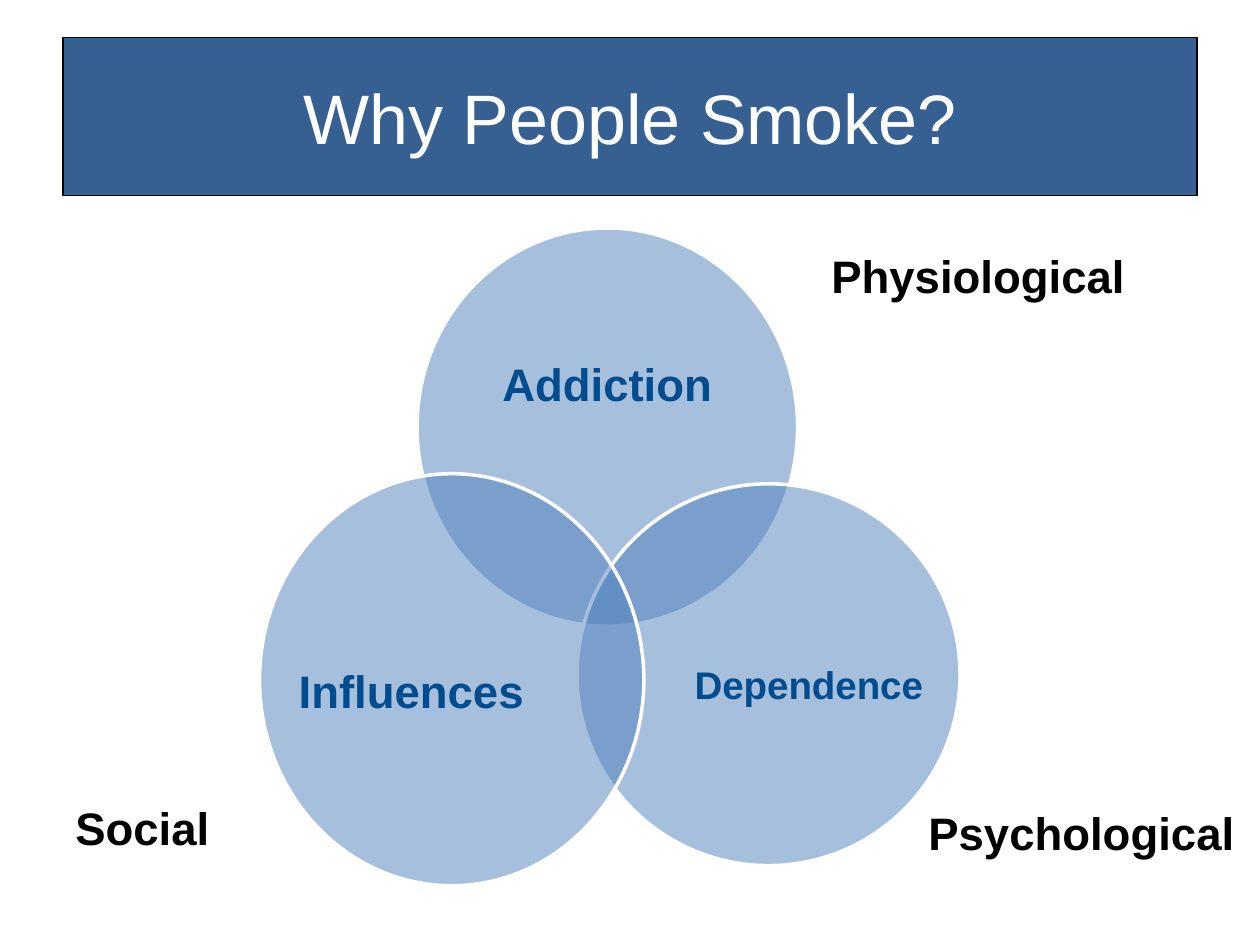
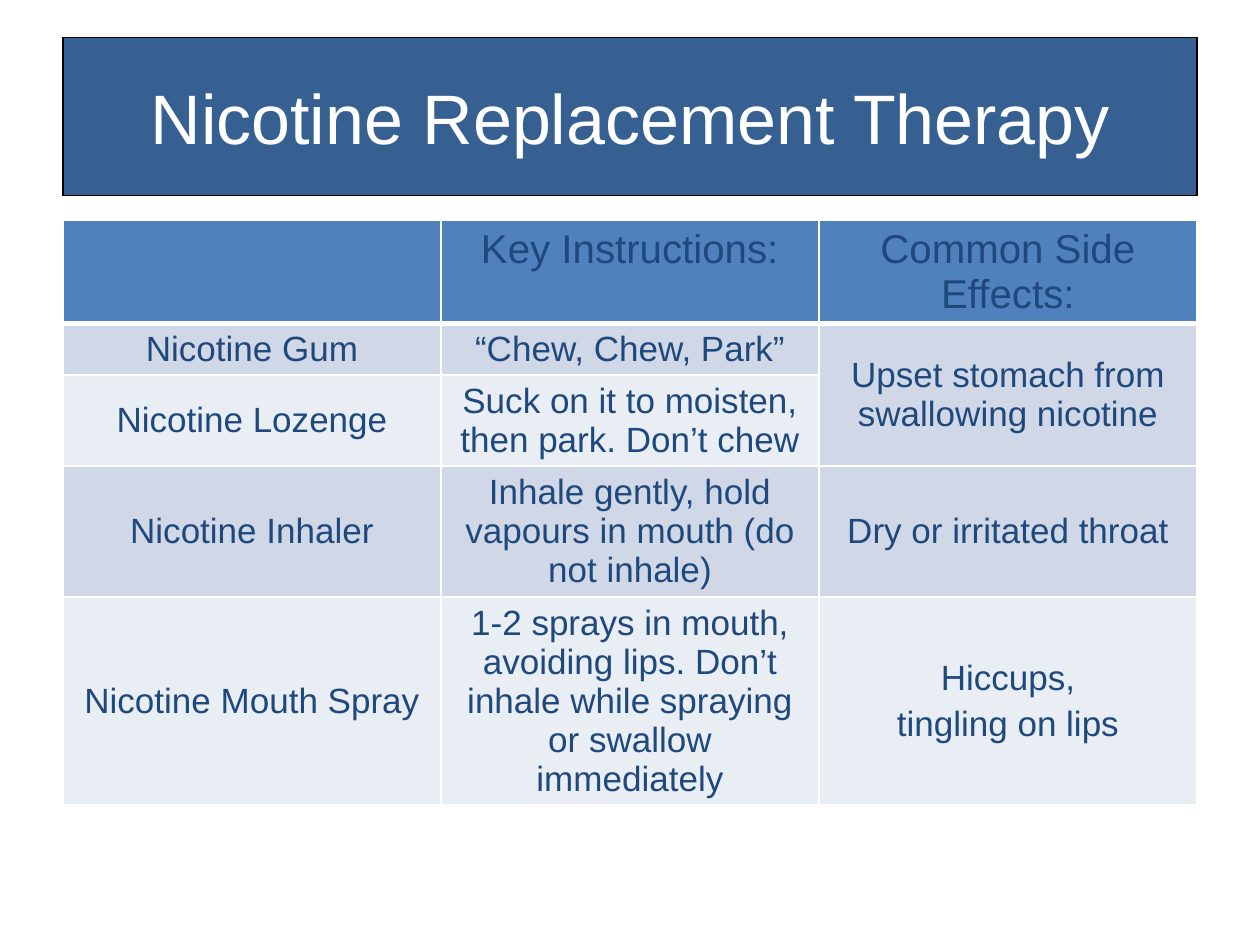
import dataclasses

import lxml.etree
import pptx
import pptx.dml.color
import pptx.enum.shapes
import pptx.enum.text
import pptx.oxml.ns
import pptx.util

Inches = pptx.util.Inches
Pt = pptx.util.Pt
RGB = pptx.dml.color.RGBColor.from_string
qn = pptx.oxml.ns.qn
PP_ALIGN = pptx.enum.text.PP_ALIGN
MIDDLE = pptx.enum.text.MSO_ANCHOR.MIDDLE


@dataclasses.dataclass(frozen=True)
class Theme:
    font: str = "Arial"
    band: str = "376092"
    accent: str = "4F81BD"
    white: str = "FFFFFF"
    black: str = "000000"
    venn_text: str = "004C8F"
    table_text: str = "1F497D"
    stripes: tuple = ("D0D8E8", "E9EDF4")
    title_size: int = 40
    label_size: int = 26
    small_label_size: int = 22
    header_size: int = 23
    cell_size: int = 20


theme = Theme()


def format_text(tf, size, color, bold=False, align=PP_ALIGN.CENTER):
    for p in tf.paragraphs:
        p.alignment = align
        for r in p.runs:
            r.font.name = theme.font
            r.font.size = Pt(size)
            r.font.bold = bold
            r.font.color.rgb = RGB(color)


def add_titled_slide(prs, title):
    s = prs.slides.add_slide(prs.slide_layouts[5])
    sp = s.shapes.title
    sp.left, sp.top, sp.width, sp.height = map(Inches, (0.5, 0.3, 9, 1.25))
    sp.fill.solid()
    sp.fill.fore_color.rgb = RGB(theme.band)
    sp.line.color.rgb = RGB(theme.black)
    sp.line.width = Pt(0.75)
    sp.text_frame.text = title
    sp.text_frame.vertical_anchor = MIDDLE
    format_text(sp.text_frame, theme.title_size, theme.white)
    return s


prs = pptx.Presentation()
prs.slide_width = Inches(10)
prs.slide_height = Inches(7.5)

# Slide 1: Venn diagram of the reasons for smoking
s = add_titled_slide(prs, "Why People Smoke?")
venn = s.shapes.add_group_shape()
reasons = [
    ("Addiction", theme.label_size, (3.31, 1.81, 3.02, 3.16), (3.71, 2.36, 2.22, 1.42)),
    ("Dependence", theme.small_label_size, (4.58, 3.84, 3.04, 3.03), (5.51, 4.62, 1.82, 1.67)),
    ("Influences", theme.label_size, (2.06, 3.76, 3.05, 3.27), (2.35, 4.61, 1.83, 1.8)),
]
for text, size, circle_box, label_box in reasons:
    circle = venn.shapes.add_shape(pptx.enum.shapes.MSO_SHAPE.OVAL, *map(Inches, circle_box))
    circle.shadow.inherit = False
    circle.fill.solid()
    circle.fill.fore_color.rgb = RGB(theme.accent)
    fill_color = circle.fill._xPr.find(qn("a:solidFill"))[0]
    lxml.etree.SubElement(fill_color, qn("a:alpha"), val="50000")
    circle.line.color.rgb = RGB(theme.white)
    circle.line.width = Pt(2)

    tf = venn.shapes.add_textbox(*map(Inches, label_box)).text_frame
    tf.margin_left = tf.margin_top = tf.margin_right = tf.margin_bottom = 0
    tf.vertical_anchor = MIDDLE
    tf.word_wrap = False
    tf.text = text
    tf.paragraphs[0].line_spacing = 0.9
    format_text(tf, size, theme.venn_text, bold=True)

for text, left, top, width in [
    ("Physiological", 6.5, 1.92, 2.67),
    ("Psychological", 7.27, 6.34, 2.67),
    ("Social", 0.5, 6.3, 1.5),
]:
    tf = s.shapes.add_textbox(*map(Inches, (left, top, width, 0.54))).text_frame
    tf.word_wrap = True
    tf.auto_size = pptx.enum.text.MSO_AUTO_SIZE.SHAPE_TO_FIT_TEXT
    tf.text = text
    format_text(tf, theme.label_size, theme.black, bold=True, align=PP_ALIGN.LEFT)

# Slide 2: table of nicotine replacement products
s = add_titled_slide(prs, "Nicotine Replacement Therapy")
rows = [
    ("", "Key Instructions:", "Common Side Effects:"),
    ("Nicotine Gum", "“Chew, Chew, Park”", "Upset stomach from swallowing nicotine"),
    ("Nicotine Lozenge", "Suck on it to moisten, then park. Don’t chew", ""),
    ("Nicotine Inhaler", "Inhale gently, hold vapours in mouth (do not inhale)", "Dry or irritated throat"),
    (
        "Nicotine Mouth Spray",
        "1-2 sprays in mouth, avoiding lips. Don’t inhale while spraying or swallow immediately",
        "Hiccups,\ntingling on lips",
    ),
]
row_heights = (0.81, 0.41, 0.72, 1.04, 1.64)
frame = s.shapes.add_table(
    len(rows), 3, Inches(0.5), Inches(1.75), Inches(9), Inches(sum(row_heights))
)
table = frame.table
for row, height in zip(table.rows, row_heights):
    row.height = Inches(height)
table.cell(1, 2).merge(table.cell(2, 2))

for i, texts in enumerate(rows):
    is_header = i == 0
    for j, text in enumerate(texts):
        cell = table.cell(i, j)
        tcPr = cell._tc.get_or_add_tcPr()
        for side in "LRTB":
            heavy = (is_header and side == "B") or (i == 1 and side == "T")
            ln = lxml.etree.SubElement(tcPr, qn(f"a:ln{side}"), w=str(Pt(3 if heavy else 1)))
            line_fill = lxml.etree.SubElement(ln, qn("a:solidFill"))
            lxml.etree.SubElement(line_fill, qn("a:srgbClr"), val=theme.white)
        cell.fill.solid()
        cell.fill.fore_color.rgb = RGB(theme.accent if is_header else theme.stripes[(i - 1) % 2])
        if not text:
            continue
        tf = cell.text_frame
        tf.text = text
        if not is_header:
            cell.vertical_anchor = MIDDLE
        for p in tf.paragraphs[1:]:
            p.space_before = Pt(4)
        format_text(tf, theme.header_size if is_header else theme.cell_size, theme.table_text)

prs.save("out.pptx")
